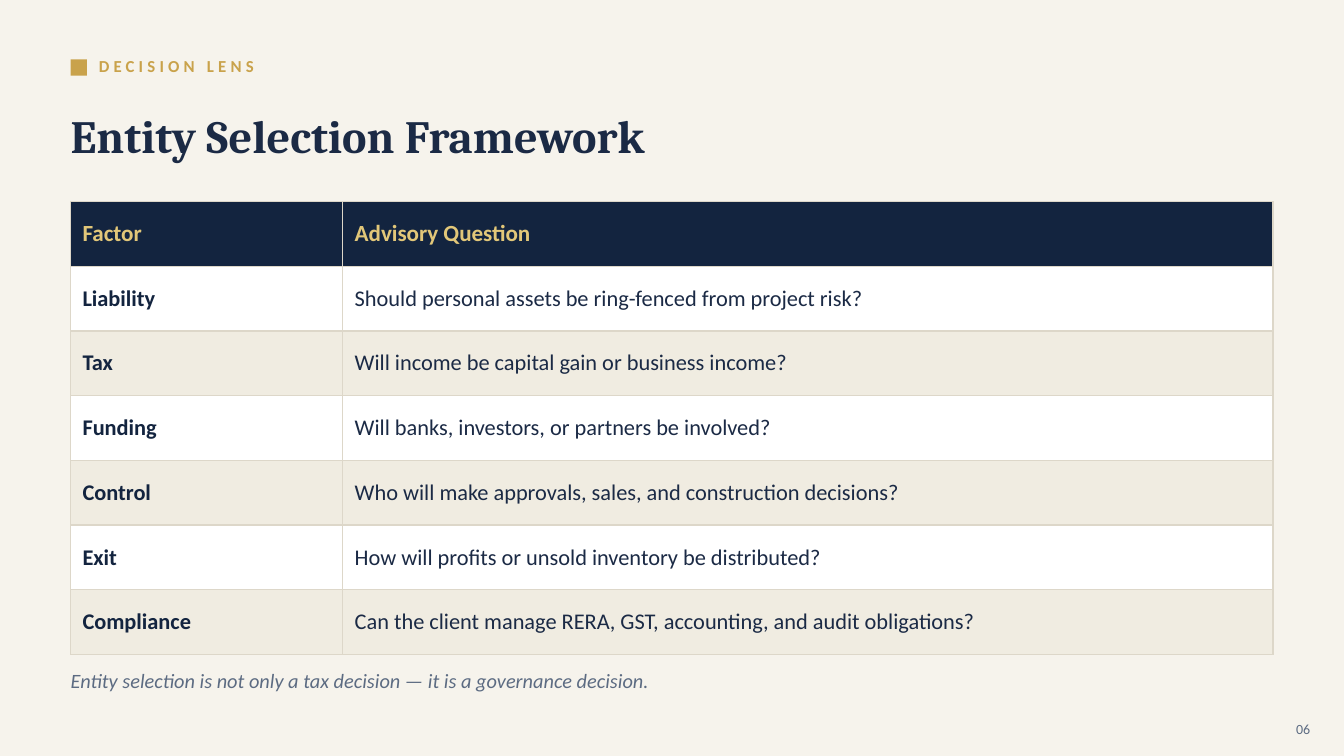
from lxml import etree
from pptx import Presentation
from pptx import util as u
from pptx.dml.color import RGBColor
from pptx.enum import shapes, text
from pptx.oxml.ns import qn

CREAM = RGBColor(0xF6, 0xF3, 0xEC)
GOLD = RGBColor(0xC9, 0xA2, 0x4B)
PALE_GOLD = RGBColor(0xE2, 0xC7, 0x79)
NAVY = RGBColor(0x13, 0x24, 0x3F)
INK = RGBColor(0x1B, 0x2A, 0x45)
SLATE = RGBColor(0x5C, 0x6B, 0x82)
WHITE = RGBColor(0xFF, 0xFF, 0xFF)
SAND = RGBColor(0xF0, 0xEC, 0xE1)
RULE = RGBColor(0xDD, 0xD7, 0xC9)

LEFT = 1.78
COLS = (6.86, 23.44)
ROW_H = 1.63
ROWS = [
    ("Factor", "Advisory Question"),
    ("Liability", "Should personal assets be ring-fenced from project risk?"),
    ("Tax", "Will income be capital gain or business income?"),
    ("Funding", "Will banks, investors, or partners be involved?"),
    ("Control", "Who will make approvals, sales, and construction decisions?"),
    ("Exit", "How will profits or unsold inventory be distributed?"),
    ("Compliance", "Can the client manage RERA, GST, accounting, and audit obligations?"),
]


def set_text(tf, content, size, color, font="Calibri", bold=False, italic=False,
             align=text.PP_ALIGN.LEFT):
    tf.text = content
    p = tf.paragraphs[0]
    p.alignment = align
    r = p.runs[0]
    r.font.name = font
    r.font.size = u.Pt(size)
    r.font.bold = bold
    r.font.italic = italic
    r.font.color.rgb = color
    return r


def fill_frame(sp, content, size, color, **style):
    tf = sp.text_frame
    tf.word_wrap = True
    tf.auto_size = text.MSO_AUTO_SIZE.NONE
    tf.vertical_anchor = text.MSO_ANCHOR.MIDDLE
    tf.margin_left = tf.margin_right = tf.margin_top = tf.margin_bottom = 0
    return set_text(tf, content, size, color, **style)


def add_label(s, box, content, size, color, **style):
    sp = s.shapes.add_textbox(*map(u.Cm, box))
    return fill_frame(sp, content, size, color, **style)


def add_marker(s, box):
    sp = s.shapes.add_shape(shapes.MSO_SHAPE.RECTANGLE, *map(u.Cm, box))
    sp.shadow.inherit = False
    sp.fill.solid()
    sp.fill.fore_color.rgb = GOLD
    sp.line.fill.background()


def set_title(s, box, content):
    sp = s.shapes.title
    sp.left, sp.top, sp.width, sp.height = map(u.Cm, box)
    fill_frame(sp, content, 33, INK, font="Cambria", bold=True)


def set_borders(cell):
    tcPr = cell._tc.get_or_add_tcPr()
    for side in ("a:lnL", "a:lnR", "a:lnT", "a:lnB"):
        ln = etree.SubElement(tcPr, qn(side), w=str(u.Pt(1)))
        fill = etree.SubElement(ln, qn("a:solidFill"))
        etree.SubElement(fill, qn("a:srgbClr"), val=str(RULE))


def format_cell(cell, content, row, col):
    cell.vertical_anchor = text.MSO_ANCHOR.MIDDLE
    cell.margin_left = cell.margin_right = u.Cm(0.3)
    cell.margin_top = cell.margin_bottom = u.Cm(0.18)
    set_borders(cell)
    cell.fill.solid()
    if row == 0:
        cell.fill.fore_color.rgb = NAVY
        set_text(cell.text_frame, content, 16.5, PALE_GOLD, bold=True)
    else:
        cell.fill.fore_color.rgb = WHITE if row % 2 else SAND
        set_text(cell.text_frame, content, 16, INK if col else NAVY, bold=col == 0)


def add_factor_table(s, top):
    box = (LEFT, top, sum(COLS), ROW_H * len(ROWS))
    table = s.shapes.add_table(len(ROWS), len(COLS), *map(u.Cm, box)).table
    for column, width in zip(table.columns, COLS):
        column.width = u.Cm(width)
    for i, contents in enumerate(ROWS):
        table.rows[i].height = u.Cm(ROW_H)
        for j, content in enumerate(contents):
            format_cell(table.cell(i, j), content, i, j)


def main():
    prs = Presentation()
    prs.slide_width, prs.slide_height = u.Cm(33.87), u.Cm(19.05)
    s = prs.slides.add_slide(prs.slide_layouts[5])
    s.background.fill.solid()
    s.background.fill.fore_color.rgb = CREAM

    add_marker(s, (LEFT, 1.5, 0.41, 0.41))
    r = add_label(s, (2.49, 1.22, 22.86, 0.86), "DECISION LENS", 12, GOLD, bold=True)
    r._r.get_or_add_rPr().set("spc", "300")
    set_title(s, (LEFT, 2.24, 30.35, 2.34), "Entity Selection Framework")
    add_factor_table(s, 5.08)
    add_label(s, (LEFT, 16.64, 30.23, 1.02),
              "Entity selection is not only a tax decision — it is a governance decision.",
              14.5, SLATE, italic=True)
    add_label(s, (31.5, 17.98, 1.52, 0.76), "06", 10, SLATE, align=text.PP_ALIGN.RIGHT)
    prs.save("out.pptx")


if __name__ == "__main__":
    main()
